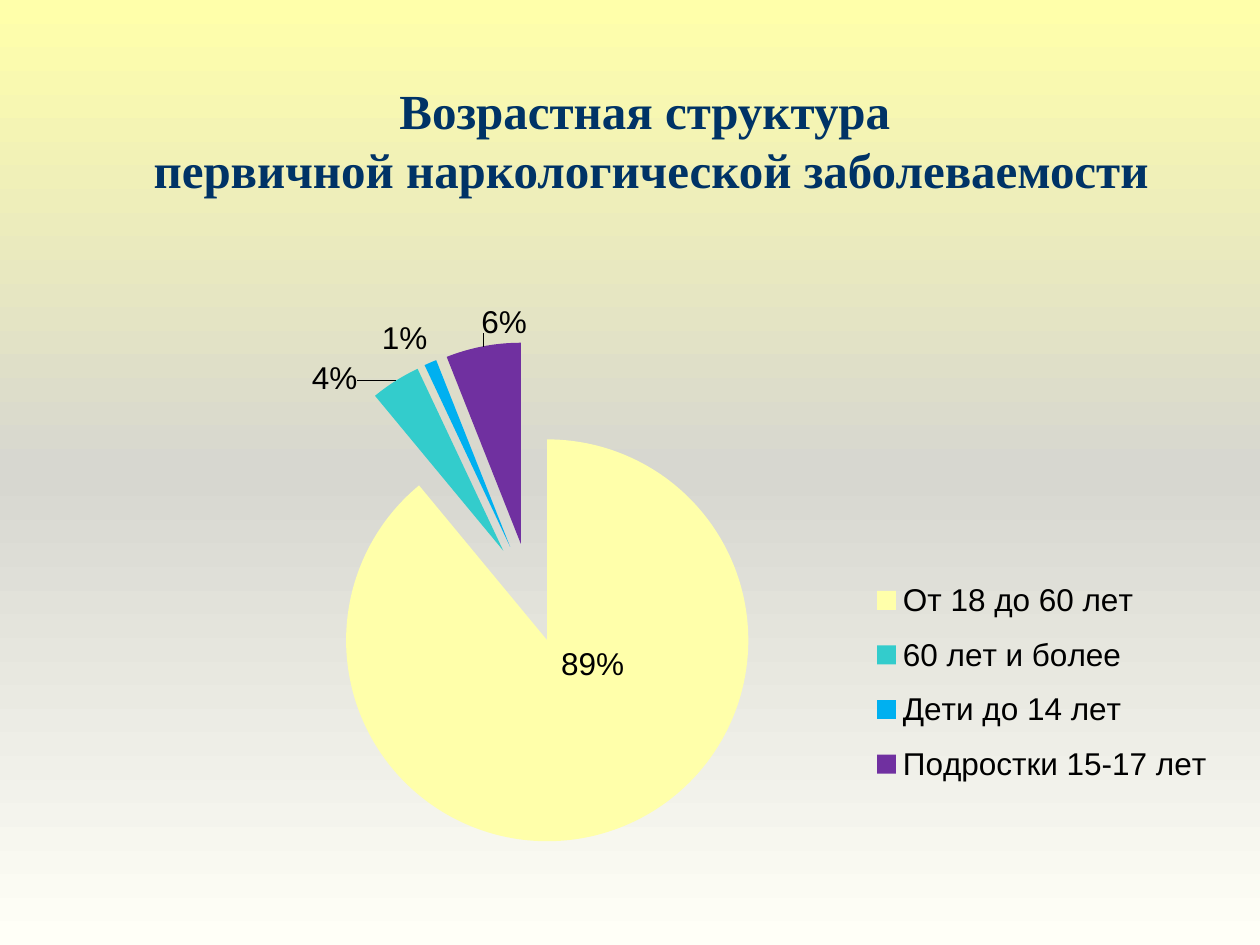
from copy import deepcopy
from typing import NamedTuple, Optional

from lxml.etree import SubElement
from pptx import Presentation
from pptx.chart.data import CategoryChartData
from pptx.dml.color import RGBColor
from pptx.enum.chart import XL_CHART_TYPE as ChartType
from pptx.enum.chart import XL_LABEL_POSITION as LabelPos
from pptx.enum.chart import XL_LEGEND_POSITION as LegendPos
from pptx.enum.text import MSO_ANCHOR as Anchor
from pptx.enum.text import PP_ALIGN as Align
from pptx.oxml.ns import qn
from pptx.util import Pt


class AgeGroup(NamedTuple):
    name: str
    share: float
    color: str
    label_pos: LabelPos = LabelPos.OUTSIDE_END
    label_shift: Optional[tuple] = None


GROUPS = [
    AgeGroup("От 18 до 60 лет", 0.89, "FFFFAA", LabelPos.CENTER, (0.01, -0.13)),
    AgeGroup("60 лет и более ", 0.04, "33CCCC", label_shift=(-0.03, 0.04)),
    AgeGroup("Дети до 14 лет ", 0.01, "00B0F0"),
    AgeGroup("Подростки 15-17 лет ", 0.06, "7030A0", label_shift=(0.04, -0.01)),
]
BACKGROUND = [(0, "FFFFAA"), (0.5, "D7D7D0"), (1, "FFFFF7")]


def rgb(color: str) -> RGBColor:
    return RGBColor.from_string(color)


def set_background(s) -> None:
    fill = s.background.fill
    fill.gradient()
    fill.gradient_angle = 270
    stops = s._element.find(".//" + qn("a:gsLst"))
    stops.append(deepcopy(stops[0]))
    for stop, (position, color) in zip(fill.gradient_stops, BACKGROUND):
        stop.position = position
        stop.color.rgb = rgb(color)


def add_title(s, text: str) -> None:
    tf = s.shapes.add_textbox(Pt(48), Pt(43), Pt(648), Pt(73.5)).text_frame
    tf.word_wrap = True
    tf.vertical_anchor = Anchor.MIDDLE
    p = tf.paragraphs[0]
    p.text = text
    p.alignment = Align.CENTER
    p.font.name, p.font.size, p.font.bold = "Times New Roman", Pt(28), True
    p.font.color.rgb = rgb("003366")


def set_layout(parent, index: int, **values) -> None:
    """Give a chart part a manual layout, as the child at index."""
    for old in parent.findall(qn("c:layout")):
        parent.remove(old)
    layout = SubElement(parent, qn("c:layout"))
    manual = SubElement(layout, qn("c:manualLayout"))
    for tag, value in values.items():
        SubElement(manual, qn(f"c:{tag}")).set("val", str(value))
    parent.insert(index, layout)


def style_slices(series) -> None:
    for i, group in enumerate(GROUPS):
        point = series.points[i]
        point.format.fill.solid()
        point.format.fill.fore_color.rgb = rgb(group.color)
        if group.label_shift:
            point.data_label.position = group.label_pos
            label = series._element.findall(".//" + qn("c:dLbl"))[-1]
            x, y = group.label_shift
            set_layout(label, 1, x=x, y=y)
    explosion = SubElement(series._element, qn("c:explosion"))
    explosion.set("val", "25")
    series._element.find(qn("c:dPt")).addprevious(explosion)


def add_age_chart(s) -> None:
    data = CategoryChartData(number_format="0%")
    data.categories = [group.name for group in GROUPS]
    data.add_series("Series 1", [group.share for group in GROUPS])
    chart = s.shapes.add_chart(
        ChartType.PIE, Pt(60), Pt(173.5), Pt(648), Pt(309), data).chart
    chart.has_title = False
    chart.font.name, chart.font.size = "Arial", Pt(18)
    chart.font.color.rgb = rgb("000000")

    plot = chart.plots[0]
    plot.vary_by_categories = True
    series = plot.series[0]
    labels = series.data_labels
    labels.show_value = True
    labels.number_format, labels.number_format_is_linked = "0%", False
    labels.position = LabelPos.OUTSIDE_END
    leader = labels._element.find(qn("c:showLeaderLines"))
    if leader is None:
        leader = SubElement(labels._element, qn("c:showLeaderLines"))
    leader.set("val", "1")
    style_slices(series)

    chart.has_legend = True
    chart.legend.position = LegendPos.RIGHT
    chart.legend.include_in_layout = False
    set_layout(chart.legend._element, 1, xMode="edge", yMode="edge",
               x=0.67, y=0.48, w=0.32, h=0.44)
    plot_area = chart._chartSpace.find(".//" + qn("c:plotArea"))
    set_layout(plot_area, 0, layoutTarget="inner", xMode="edge", yMode="edge",
               x=0.05, y=0.07, w=0.65, h=0.93)


def main() -> None:
    prs = Presentation()
    prs.slide_width, prs.slide_height = Pt(720), Pt(540)
    s = prs.slides.add_slide(prs.slide_layouts[6])
    set_background(s)
    add_title(s, "Возрастная структура \vпервичной наркологической заболеваемости")
    add_age_chart(s)
    prs.save("out.pptx")


if __name__ == "__main__":
    main()
